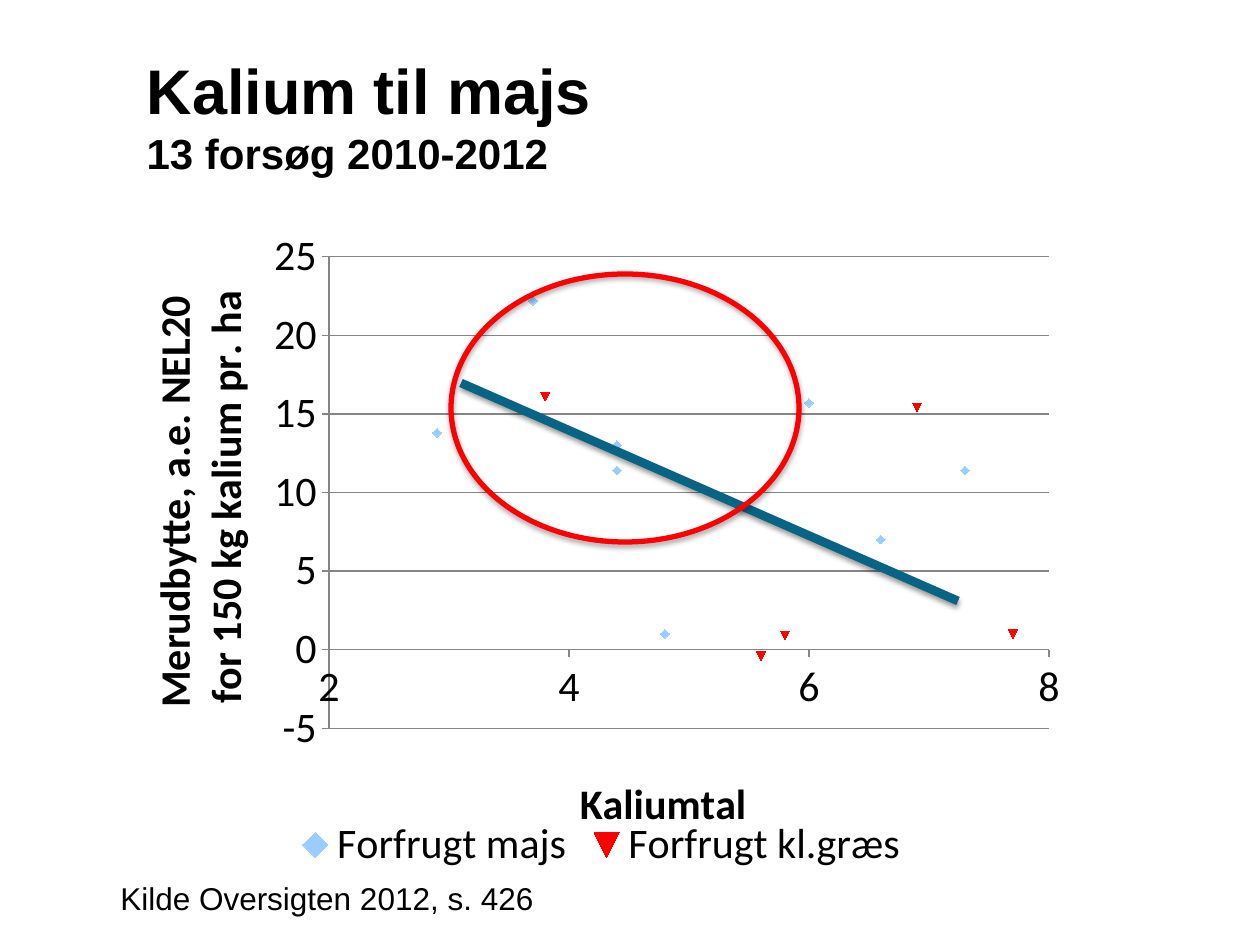
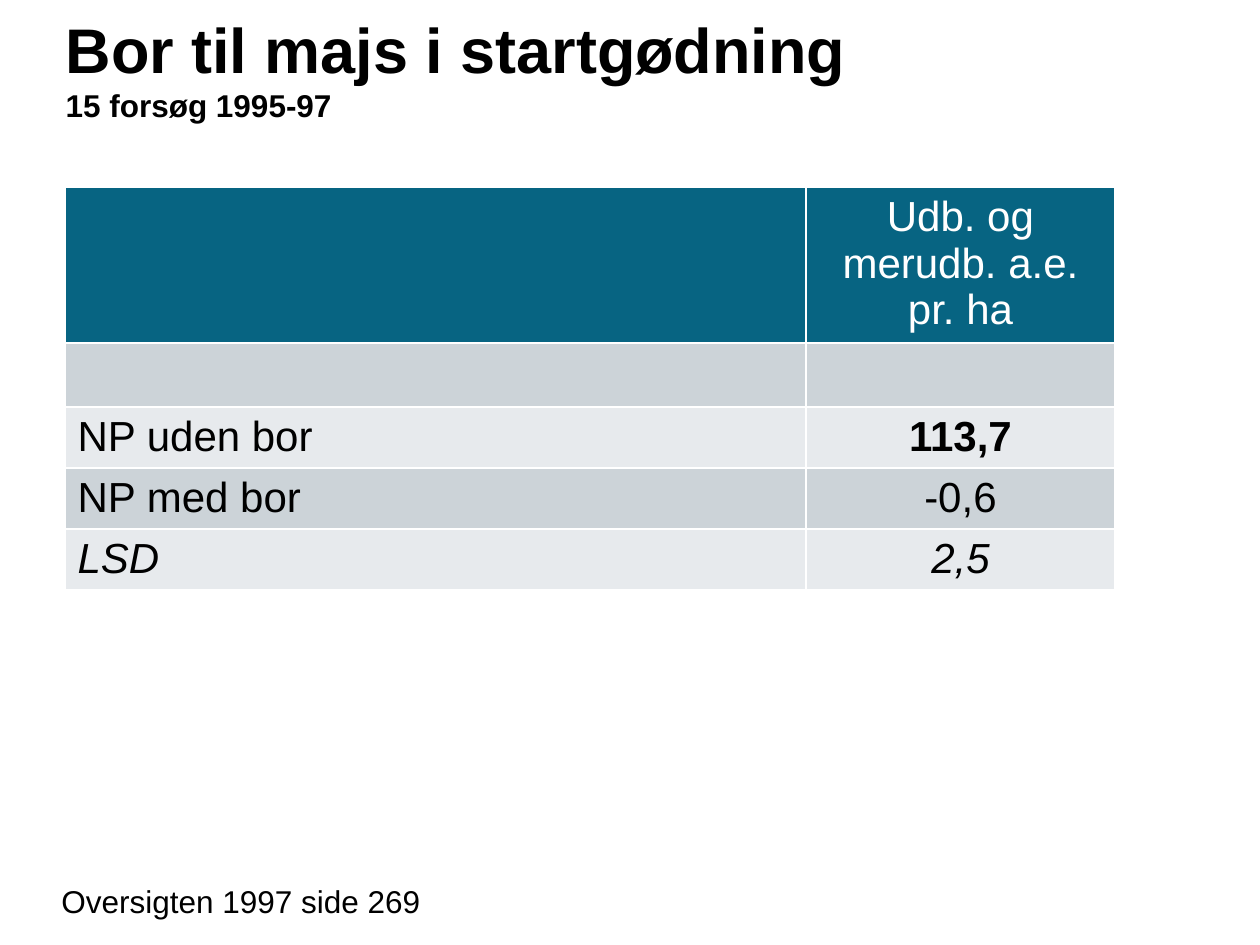
from dataclasses import dataclass

from lxml import etree
from pptx import Presentation
from pptx.chart.data import XyChartData
from pptx.dml.color import RGBColor
from pptx.enum.chart import XL_CHART_TYPE, XL_LEGEND_POSITION, XL_MARKER_STYLE, XL_TICK_MARK
from pptx.enum.shapes import MSO_CONNECTOR, MSO_SHAPE
from pptx.enum.text import MSO_ANCHOR, MSO_AUTO_SIZE, PP_ALIGN
from pptx.oxml.ns import qn
from pptx.util import Emu, Pt

SCATTER = XL_CHART_TYPE.XY_SCATTER
LEGEND_BOTTOM = XL_LEGEND_POSITION.BOTTOM
DIAMOND = XL_MARKER_STYLE.DIAMOND
AUTOMATIC = XL_MARKER_STYLE.AUTOMATIC
TICK_OUTSIDE = XL_TICK_MARK.OUTSIDE
STRAIGHT = MSO_CONNECTOR.STRAIGHT
ELLIPSE = MSO_SHAPE.OVAL
MIDDLE = MSO_ANCHOR.MIDDLE
FIXED_SIZE = MSO_AUTO_SIZE.NONE
GROW = MSO_AUTO_SIZE.SHAPE_TO_FIT_TEXT
LEFT = PP_ALIGN.LEFT
CENTER = PP_ALIGN.CENTER
TITLE_ONLY = 5
EMU_PER_PX = 914400 / 126


@dataclass(frozen=True)
class Theme:
    ink: str = "000000"
    white: str = "FFFFFF"
    teal: str = "076482"
    red: str = "FF0000"
    sky: str = "99CCFF"
    axis: str = "868686"
    band_dark: str = "CCD3D8"
    band_light: str = "E7EAED"
    text_font: str = "Arial"
    chart_font: str = "Calibri"
    title_size: int = 36
    body_size: int = 24
    small_size: int = 18


def px(length):
    return Emu(round(length * EMU_PER_PX))


def rgb(color):
    return RGBColor.from_string(color)


def set_values(target, values):
    for name, value in values.items():
        setattr(target, name, value)


class DeckBuilder:
    def __init__(self, theme):
        self.theme = theme
        self.deck = Presentation()
        set_values(self.deck, {"slide_width": px(1260), "slide_height": px(945)})
        self.page = None

    def add_page(self):
        self.page = self.deck.slides.add_slide(self.deck.slide_layouts[TITLE_ONLY])

    def style_font(self, font, size, color=None, name=None, **extras):
        values = {"name": name or self.theme.text_font, "size": Pt(size), "bold": False, **extras}
        set_values(font, values)
        font.color.rgb = rgb(color or self.theme.ink)

    def title(self, place, heading, subheading, subheading_size):
        box = self.page.shapes.title
        set_values(box, dict(zip(("left", "top", "width", "height"), map(px, place))))
        frame = box.text_frame
        set_values(frame, {"vertical_anchor": MIDDLE, "auto_size": FIXED_SIZE, "word_wrap": True})
        para = frame.paragraphs[0]
        para.alignment = LEFT
        for text, size in ((heading, self.theme.title_size), (subheading, subheading_size)):
            if para.runs:
                para.add_line_break()
            span = para.add_run()
            span.text = text
            self.style_font(span.font, size, bold=True)

    def source(self, place, text):
        box = self.page.shapes.add_textbox(*map(px, place))
        frame = box.text_frame
        set_values(frame, {"word_wrap": False, "auto_size": GROW})
        span = frame.paragraphs[0].add_run()
        span.text = text
        self.style_font(span.font, self.theme.small_size)

    def stroke(self, shape, color, width, shadow_opacity):
        shape.line.color.rgb = rgb(color)
        shape.line.width = Pt(width)
        effects = etree.SubElement(shape._element.spPr, qn("a:effectLst"))
        shadow = etree.SubElement(effects, qn("a:outerShdw"), blurRad=str(Pt(3)),
                                  dist=str(Pt(1.6)), dir="5400000", rotWithShape="0")
        tint = etree.SubElement(shadow, qn("a:srgbClr"), val=self.theme.ink)
        etree.SubElement(tint, qn("a:alpha"), val=str(shadow_opacity * 1000))

    def line(self, ends, color, width):
        connector = self.page.shapes.add_connector(STRAIGHT, *map(px, ends))
        self.stroke(connector, color, width, 38)

    def ring(self, place, color, width):
        shape = self.page.shapes.add_shape(ELLIPSE, *map(px, place))
        shape.fill.background()
        self.stroke(shape, color, width, 35)

    def lay_out(self, parent, index, values):
        layout = parent.find(qn("c:layout"))
        if layout is None:
            layout = etree.Element(qn("c:layout"))
            parent.insert(index, layout)
        manual = etree.SubElement(layout, qn("c:manualLayout"))
        for name, value in values.items():
            etree.SubElement(manual, qn(f"c:{name}"), val=str(value))

    def axis(self, axis, title_lines, title_place, low, high, step):
        set_values(axis, {"minimum_scale": low, "maximum_scale": high, "major_unit": step,
                          "major_tick_mark": TICK_OUTSIDE})
        axis.format.line.color.rgb = rgb(self.theme.axis)
        frame = axis.axis_title.text_frame
        for number, text in enumerate(title_lines):
            para = frame.add_paragraph() if number else frame.paragraphs[0]
            span = para.add_run()
            span.text = text
            self.style_font(span.font, self.theme.body_size, name=self.theme.chart_font, bold=True)
        left, top = title_place
        self.lay_out(axis.axis_title._element, 1,
                     {"xMode": "edge", "yMode": "edge", "x": left, "y": top})

    def scatter(self, place, x_values, series, category_axis, value_axis, plot_place):
        data = XyChartData()
        for name, y_values, *_ in series:
            group = data.add_series(name)
            for x_value, y_value in zip(x_values, y_values):
                group.add_data_point(x_value, y_value)
        chart = self.page.shapes.add_chart(SCATTER, *map(px, place), data).chart
        for point in list(chart._chartSpace.iter(qn("c:pt"))):
            if point.findtext(qn("c:v")) in ("None", ""):
                point.getparent().remove(point)
        set_values(chart, {"has_title": False, "has_legend": True})
        self.style_font(chart.font, self.theme.body_size, name=self.theme.chart_font)
        set_values(chart.legend, {"position": LEGEND_BOTTOM, "include_in_layout": False})
        chart.plots[0].vary_by_categories = False
        for plotted, (_, _, color, style) in zip(chart.plots[0].series, series):
            plotted.smooth = False
            plotted.format.line.fill.background()
            set_values(plotted.marker, {"style": style, "size": 5})
            plotted.marker.format.fill.solid()
            plotted.marker.format.fill.fore_color.rgb = rgb(color)
            plotted.marker.format.line.fill.background()
        self.axis(chart.category_axis, **category_axis)
        self.axis(chart.value_axis, **value_axis)
        chart.category_axis.has_major_gridlines = False
        chart.value_axis.has_major_gridlines = True
        chart.value_axis.major_gridlines.format.line.color.rgb = rgb(self.theme.axis)
        modes = {"layoutTarget": "inner", "xMode": "edge", "yMode": "edge"}
        self.lay_out(chart._chartSpace.chart.plotArea, 0,
                     {**modes, **dict(zip("xywh", plot_place))})

    def cell(self, cell, text, fill, alignment, **font_values):
        cell.fill.solid()
        cell.fill.fore_color.rgb = rgb(fill)
        if text:
            para = cell.text_frame.paragraphs[0]
            para.alignment = alignment
            span = para.add_run()
            span.text = text
            self.style_font(span.font, self.theme.body_size, **font_values)

    def table(self, left, top, widths, heights, rows):
        place = (left, top, sum(widths), sum(heights))
        table = self.page.shapes.add_table(len(rows), len(widths), *map(px, place)).table
        for column, width in zip(table.columns, widths):
            column.width = px(width)
        for row, height in zip(table.rows, heights):
            row.height = px(height)
        bands = (self.theme.band_light, self.theme.band_dark)
        for number, (label, value, label_font, value_font) in enumerate(rows):
            fill = bands[number % 2] if number else self.theme.teal
            self.cell(table.cell(number, 0), label, fill, LEFT, **label_font)
            self.cell(table.cell(number, 1), value, fill, CENTER, **value_font)


def potassium_page(builder):
    theme = builder.theme
    builder.add_page()
    builder.title((134, 36, 992, 158), "Kalium til majs", "13 forsøg 2010-2012", theme.body_size)
    potassium = [4.4, 6, 4.8, 7.3, 3.7, 6.6, 2.9, 4.4, 6.9, 5.8, 5.6, 7.7, 3.8]
    after_maize = [11.4, 15.7, 1, 11.4, 22.2, 7, 13.8, 13]
    after_grass = [15.4, 0.9, -0.4, 1, 16.1]
    builder.scatter(
        (115, 224, 973, 655),
        potassium,
        [("Forfrugt majs", after_maize + [None] * len(after_grass), theme.sky, DIAMOND),
         ("Forfrugt kl.græs", [None] * len(after_maize) + after_grass, theme.red, AUTOMATIC)],
        {"title_lines": ["Kaliumtal"], "title_place": (0.47, 0.83),
         "low": 2, "high": 8, "step": 2},
        {"title_lines": ["Merudbytte, a.e. NEL20 ", "for 150 kg kalium pr. ha"],
         "title_place": (0.03, 0.09), "low": -5, "high": 25, "step": 5},
        (0.22, 0.05, 0.74, 0.72))
    builder.line((461, 383, 958, 601), theme.teal, 5)
    builder.source((108, 873, 442, 50), "Kilde Oversigten 2012, s. 426")
    builder.ring((451, 274, 348, 268), theme.red, 3)


def boron_page(builder):
    theme = builder.theme
    builder.add_page()
    rows = [("", "Udb. og merudb. a.e. pr. ha", {}, {"color": theme.white}),
            ("", "", {}, {}),
            ("NP uden bor", "113,7", {}, {"bold": True}),
            ("NP med bor", "-0,6", {}, {}),
            ("LSD", "2,5", {"italic": True}, {"italic": True})]
    builder.table(65, 187, (741, 309), (156, 64, 61, 61, 61), rows)
    builder.title((53, 7, 1063, 120), "Bor til majs i startgødning", "15 forsøg 1995-97",
                  theme.small_size)
    builder.source((49, 876, 388, 50), "Oversigten 1997 side 269")


def main():
    builder = DeckBuilder(Theme())
    potassium_page(builder)
    boron_page(builder)
    builder.deck.save("out.pptx")


if __name__ == "__main__":
    main()
